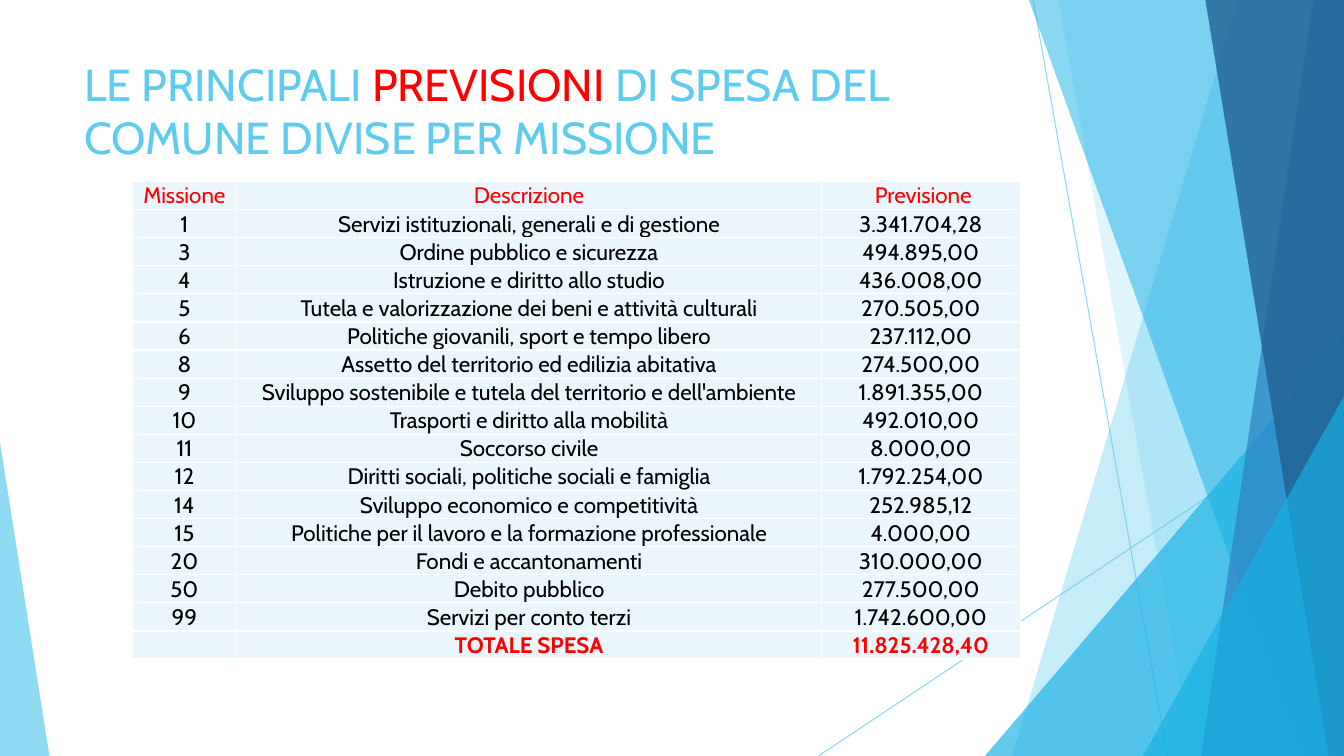
import pptx
import pptx.util
import pptx.dml.color
import pptx.enum.shapes
import pptx.enum.text
import pptx.oxml
import pptx.oxml.ns
import lxml.etree
from dataclasses import dataclass

Pt = pptx.util.Pt
Kind = pptx.enum.shapes.MSO_SHAPE
Anchor = pptx.enum.text.MSO_ANCHOR
tag = pptx.oxml.ns.qn


@dataclass(frozen=True)
class Theme:
    font: str = "Cabin"
    head: int = 32
    body: int = 16
    sky: str = "5FCBEF"
    cyan: str = "17B0E4"
    blue: str = "2E83C3"
    navy: str = "226292"
    red: str = "FF0000"
    black: str = "000000"
    pale: str = "EAF6FC"
    white: str = "FFFFFF"


THEME = Theme()

TITLE = [
    ("LE PRINCIPALI ", THEME.sky),
    ("PREVISIONI", THEME.red),
    (" DI SPESA DEL COMUNE DIVISE PER MISSIONE", THEME.sky),
]

ROWS = [
    ("Missione", "Descrizione", " Previsione"),
    ("1", "Servizi istituzionali, generali e di gestione", "3.341.704,28"),
    ("3", "Ordine pubblico e sicurezza", "494.895,00"),
    ("4", "Istruzione e diritto allo studio", "436.008,00"),
    ("5", "Tutela e valorizzazione dei beni e attività culturali", "270.505,00"),
    ("6", "Politiche giovanili, sport e tempo libero", "237.112,00"),
    ("8", "Assetto del territorio ed edilizia abitativa", "274.500,00"),
    ("9", "Sviluppo sostenibile e tutela del territorio e dell'ambiente", "1.891.355,00"),
    ("10", "Trasporti e diritto alla mobilità", "492.010,00"),
    ("11", "Soccorso civile", "8.000,00"),
    ("12", "Diritti sociali, politiche sociali e famiglia", "1.792.254,00"),
    ("14", "Sviluppo economico e competitività", "252.985,12"),
    ("15", "Politiche per il lavoro e la formazione professionale", "4.000,00"),
    ("20", "Fondi e accantonamenti", "310.000,00"),
    ("50", "Debito pubblico", "277.500,00"),
    ("99", "Servizi per conto terzi", "1.742.600,00"),
    ("", "TOTALE SPESA", "11.825.428,40"),
]


def rgb(code):
    return pptx.dml.color.RGBColor.from_string(code)


def fade(part, alpha):
    """Set the opacity, in percent, of the part's first colour."""
    color = next(part._element.spPr.iter(tag("a:srgbClr")))
    lxml.etree.SubElement(color, tag("a:alpha"), val=str(alpha * 1000))


def tint(shape, color, alpha):
    shape.shadow.inherit = False
    shape.fill.solid()
    shape.fill.fore_color.rgb = rgb(color)
    shape.line.fill.background()
    fade(shape, alpha)


def style(run, size, color, bold=False):
    run.font.name = THEME.font
    run.font.size = Pt(size)
    run.font.bold = bold
    run.font.color.rgb = rgb(color)


def ray(slide, x1, y1, x2, y2):
    line = slide.shapes.add_connector(
        pptx.enum.shapes.MSO_CONNECTOR.STRAIGHT, Pt(x1), Pt(y1), Pt(x2), Pt(y2))
    line.line.width = Pt(0.75)
    line.line.color.rgb = rgb(THEME.sky)
    fade(line, 70)
    lxml.etree.SubElement(line._element.spPr, tag("a:effectLst"))


def band(slide, box, top, base, color, alpha):
    """Fill from a slanted left edge to the right side of the box."""
    x, y, w, h = box
    right, foot = x + w, y + h
    pen = slide.shapes.build_freeform(Pt(x + top), Pt(y))
    pen.add_line_segments(
        [(Pt(right), Pt(y)), (Pt(right), Pt(foot)), (Pt(x + base), Pt(foot))])
    tint(pen.convert_to_shape(), color, alpha)


def wedge(slide, box, left, width, height, peak, color, alpha):
    """Stand a right triangle on the bottom of the box."""
    x, y, w, h = box
    shape = slide.shapes.add_shape(
        Kind.ISOSCELES_TRIANGLE, Pt(x + left), Pt(y + h - height), Pt(width), Pt(height))
    shape.adjustments[0] = peak
    tint(shape, color, alpha)


def decor(slide, box):
    x, y, w, h = box
    # Thin rays
    ray(slide, x + 738, y, x + 834, y + h)
    ray(slide, x + w, y + 290, x + 584.6, y + h)
    # Overlapping bands and wedges, back to front
    band(slide, box, 884, 723, THEME.sky, 36)
    band(slide, box, 756, 852, THEME.sky, 20)
    wedge(slide, box, 703.5, 256.5, 300, 1, THEME.cyan, 66)
    band(slide, box, 735, 929.5, THEME.cyan, 50)
    band(slide, box, 938, 858, THEME.blue, 70)
    band(slide, box, 861, 949, THEME.navy, 80)
    wedge(slide, box, 816.5, 143.5, 257, 1, THEME.cyan, 66)
    wedge(slide, box, 0, 35.3, 224, 0, THEME.sky, 70)


def title(slide, box):
    frame = slide.shapes.add_textbox(*map(Pt, box)).text_frame
    frame.word_wrap = True
    frame.vertical_anchor = Anchor.TOP
    for text, color in TITLE:
        run = frame.paragraphs[0].add_run()
        run.text = text
        style(run, THEME.head, color)


def edge(cell):
    """Draw white borders on all four sides of the cell."""
    props = cell._tc.get_or_add_tcPr()
    for spot, side in enumerate(("lnL", "lnR", "lnT", "lnB")):
        line = lxml.etree.Element(tag("a:" + side), w=str(Pt(1)))
        fill = lxml.etree.SubElement(line, tag("a:solidFill"))
        lxml.etree.SubElement(fill, tag("a:srgbClr"), val=THEME.white)
        props.insert(spot, line)


def fill_cell(cell, text, color, bold):
    cell.margin_left = cell.margin_right = cell.margin_top = Pt(0.7)
    cell.margin_bottom = 0
    cell.vertical_anchor = Anchor.BOTTOM
    cell.fill.solid()
    cell.fill.fore_color.rgb = rgb(THEME.pale)
    edge(cell)
    cell.text_frame.text = text
    para = cell.text_frame.paragraphs[0]
    para.alignment = pptx.enum.text.PP_ALIGN.CENTER
    for run in para.runs:
        style(run, THEME.body, color, bold)
    # Keep an empty cell as low as its row
    if not text:
        end = lxml.etree.SubElement(
            para._p, tag("a:endParaRPr"), sz=str(THEME.body * 100))
        lxml.etree.SubElement(end, tag("a:latin"), typeface=THEME.font)


def costs(slide, box):
    x, y, w, h = box
    grid = slide.shapes.add_table(len(ROWS), 3, Pt(x), Pt(y), Pt(w), Pt(h)).table
    grid.first_row = grid.horz_banding = False
    for col, share in zip(grid.columns, (0.118, 0.658, 0.224)):
        col.width = Pt(w * share)
    last = len(ROWS) - 1
    for r, row in enumerate(ROWS):
        grid.rows[r].height = Pt(h / len(ROWS))
        color = THEME.red if r in (0, last) else THEME.black
        for c, text in enumerate(row):
            fill_cell(grid.cell(r, c), text, color, r == last)


def main():
    deck = pptx.Presentation()
    deck.slide_width, deck.slide_height = Pt(960), Pt(540)
    slide = deck.slides.add_slide(deck.slide_layouts[6])
    decor(slide, (0, 0, 960, 540))
    title(slide, (53.3, 36.7, 670, 85))
    costs(slide, (94.3, 129.6, 634.5, 341.4))
    deck.save("out.pptx")


if __name__ == "__main__":
    main()
